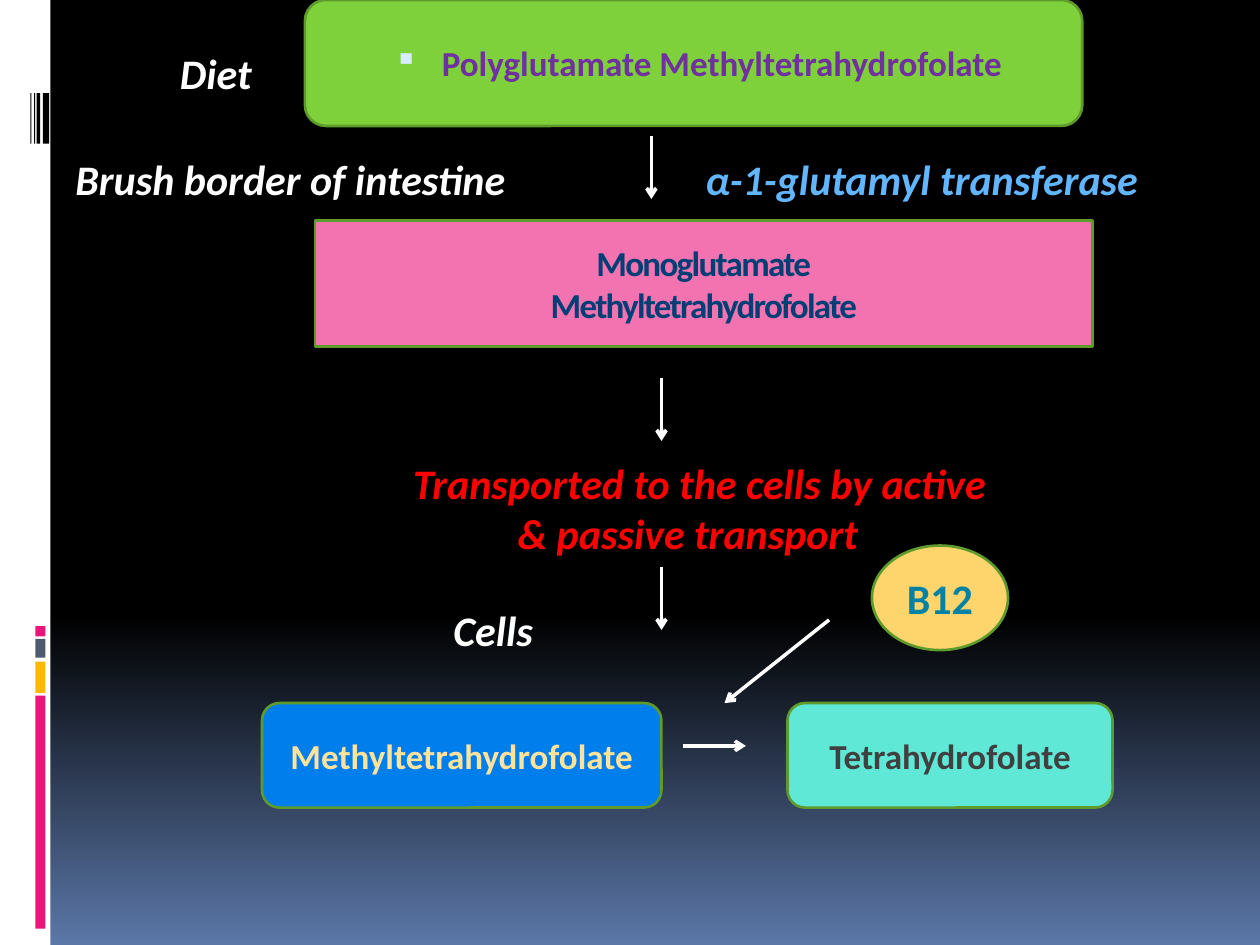
from lxml.etree import SubElement
from pptx import Presentation
from pptx.dml.color import RGBColor
from pptx.enum.shapes import MSO_CONNECTOR, MSO_SHAPE as SHAPE
from pptx.enum.text import MSO_ANCHOR, MSO_AUTO_SIZE, PP_ALIGN
from pptx.oxml.ns import qn
from pptx.util import Inches, Pt

COLORS = {
    "white": "FFFFFF", "black": "000000", "dusk": "5B77A8", "magenta": "EA157A",
    "amber": "FEB80A", "slate": "4E5B6F", "outline": "5E9B2C", "pink": "F273AF",
    "navy": "003F75", "green": "7FD13B", "purple": "7030A0", "ice": "D6ECFF",
    "sky": "61B6FF", "red": "FF0000", "blue": "007EEB", "cream": "FFE39D",
    "mint": "5FE8D6", "charcoal": "404040", "yellow": "FED46C", "teal": "0082A5",
}


def rgb(name):
    """Return the named colour."""
    return RGBColor.from_string(COLORS[name])


class PathwaySlide:
    """Holds the style and the slide of the folate pathway."""

    font = "Calibri"
    box_size = 20
    label_size = 24

    def __init__(self, deck):
        """Add a title-only slide with a dark gradient."""
        self.page = deck.slides.add_slide(deck.slide_layouts[5])
        fill = self.page.background.fill
        fill.gradient()
        fill.gradient_angle = 270
        for stop, name, position in zip(fill.gradient_stops, ("black", "dusk"), (0.65, 1)):
            stop.color.rgb = rgb(name)
            stop.position = position

    def add_span(self, para, text, color, size, italic=False):
        """Add one bold run to a paragraph."""
        span = para.add_run()
        span.text = text
        font = span.font
        font.name, font.size, font.bold, font.italic = self.font, Pt(size), True, italic
        font.color.rgb = rgb(color)
        return span

    def paint(self, box, fill, outline=True):
        """Give a box its fill and outline."""
        box.fill.solid()
        box.fill.fore_color.rgb = rgb(fill)
        if outline:
            box.line.color.rgb = rgb("outline")
            box.line.width = Pt(1.5)
        else:
            box.line.fill.background()

    def stripe(self, left, top, width, height, color):
        """Add a plain bar of the side decoration."""
        bar = self.page.shapes.add_shape(
            SHAPE.RECTANGLE, *map(Inches, (left, top, width, height)))
        bar.shadow.inherit = False
        self.paint(bar, color, outline=False)

    def title(self, place, lines, fill, color):
        """Place the title and fill in its lines."""
        box = self.page.shapes.title
        box.left, box.top, box.width, box.height = map(Inches, place)
        self.paint(box, fill)
        frame = box.text_frame
        frame.auto_size = MSO_AUTO_SIZE.NONE
        frame.vertical_anchor = MSO_ANCHOR.MIDDLE
        for index, line in enumerate(lines):
            para = frame.add_paragraph() if index else frame.paragraphs[0]
            para.alignment = PP_ALIGN.CENTER
            span = self.add_span(para, line, color, self.box_size)
            span.font._element.set("spc", "-100")

    def box(self, kind, place, text, fill, color, size=box_size):
        """Add a filled shape with centred text and return its paragraph."""
        box = self.page.shapes.add_shape(kind, *map(Inches, place))
        box.shadow.inherit = False
        self.paint(box, fill)
        frame = box.text_frame
        frame.word_wrap = True
        frame.vertical_anchor = MSO_ANCHOR.MIDDLE
        para = frame.paragraphs[0]
        para.alignment = PP_ALIGN.CENTER
        self.add_span(para, text, color, size)
        return para

    def bullet(self, para, mark, color):
        """Give a paragraph a hanging square bullet."""
        para.space_before = Pt(7)
        properties = para._p.get_or_add_pPr()
        properties.set("marL", str(Inches(0.45)))
        properties.set("indent", str(Inches(-0.38)))
        tint = SubElement(properties, qn("a:buClr"))
        SubElement(tint, qn("a:srgbClr"), val=COLORS[color])
        SubElement(properties, qn("a:buSzPct"), val="95000")
        SubElement(properties, qn("a:buChar"), char=mark)

    def label(self, place, lines, color, wrap=False):
        """Add italic text from pairs of text and left indent."""
        box = self.page.shapes.add_textbox(*map(Inches, place))
        frame = box.text_frame
        frame.word_wrap = wrap
        frame.auto_size = MSO_AUTO_SIZE.SHAPE_TO_FIT_TEXT
        for index, (line, indent) in enumerate(lines):
            para = frame.add_paragraph() if index else frame.paragraphs[0]
            if indent:
                para._p.get_or_add_pPr().set("marL", str(Inches(indent)))
            self.add_span(para, line, color, self.label_size, italic=True)

    def arrow(self, *ends):
        """Add a white arrow between two points."""
        line = self.page.shapes.add_connector(MSO_CONNECTOR.STRAIGHT, *map(Inches, ends))
        line.line.color.rgb = rgb("white")
        line.line.width = Pt(2)
        SubElement(line.line._get_or_add_ln(), qn("a:tailEnd"), type="arrow")
        SubElement(line._element.spPr, qn("a:effectLst"))


def main():
    """Build the folate absorption slide."""
    deck = Presentation()
    deck.slide_width, deck.slide_height = Inches(10), Inches(7.5)
    slide = PathwaySlide(deck)

    slide.stripe(0, 0, 0.4, 7.5, "white")
    for top, height, color in (
            (5.52, 1.85, "magenta"), (5.25, 0.25, "amber"),
            (5.07, 0.15, "slate"), (4.97, 0.08, "magenta")):
        slide.stripe(0.28, top, 0.08, height, color)
    for left, width in ((0.34, 0.05), (0.29, 0.03), (0.27, 0.01), (0.24, 0.01)):
        slide.stripe(left, 0.74, width, 0.4, "black")

    slide.title((2.5, 1.75, 6.17, 1), ("Monoglutamate", "Methyltetrahydrofolate"),
                "pink", "navy")
    diet = slide.box(SHAPE.ROUNDED_RECTANGLE, (2.42, 0, 6.17, 1),
                     "Polyglutamate Methyltetrahydrofolate", "green", "purple")
    slide.bullet(diet, "▪", "ice")
    slide.box(SHAPE.ROUNDED_RECTANGLE, (2.08, 5.58, 3.17, 0.83),
              "Methyltetrahydrofolate", "blue", "cream")
    slide.box(SHAPE.ROUNDED_RECTANGLE, (6.25, 5.58, 2.58, 0.83),
              "Tetrahydrofolate", "mint", "charcoal")
    slide.box(SHAPE.OVAL, (6.92, 4.33, 1.08, 0.83), "B12", "yellow", "teal",
              slide.label_size)

    for left, top, width, text, color in (
            (1.33, 0.33, 0.8, "Diet", "white"),
            (0.5, 1.17, 3.7, "Brush border of intestine", "white"),
            (5.5, 1.17, 3.77, "α-1-glutamyl transferase", "sky"),
            (3.5, 4.75, 0.88, "Cells", "white")):
        slide.label((left, top, width, 0.5), [(text, 0)], color)
    slide.label((2.5, 3.58, 6.08, 0.91),
                [("Transported to the cells by active", 0.68),
                 ("& passive transport", 1.51)], "red", wrap=True)

    for x, top in ((5.17, 1.08), (5.25, 3), (5.25, 4.5)):
        slide.arrow(x, top, x, top + 0.5)
    slide.arrow(5.42, 5.92, 5.92, 5.92)
    slide.arrow(6.58, 4.92, 5.75, 5.58)

    deck.save("out.pptx")


if __name__ == "__main__":
    main()
